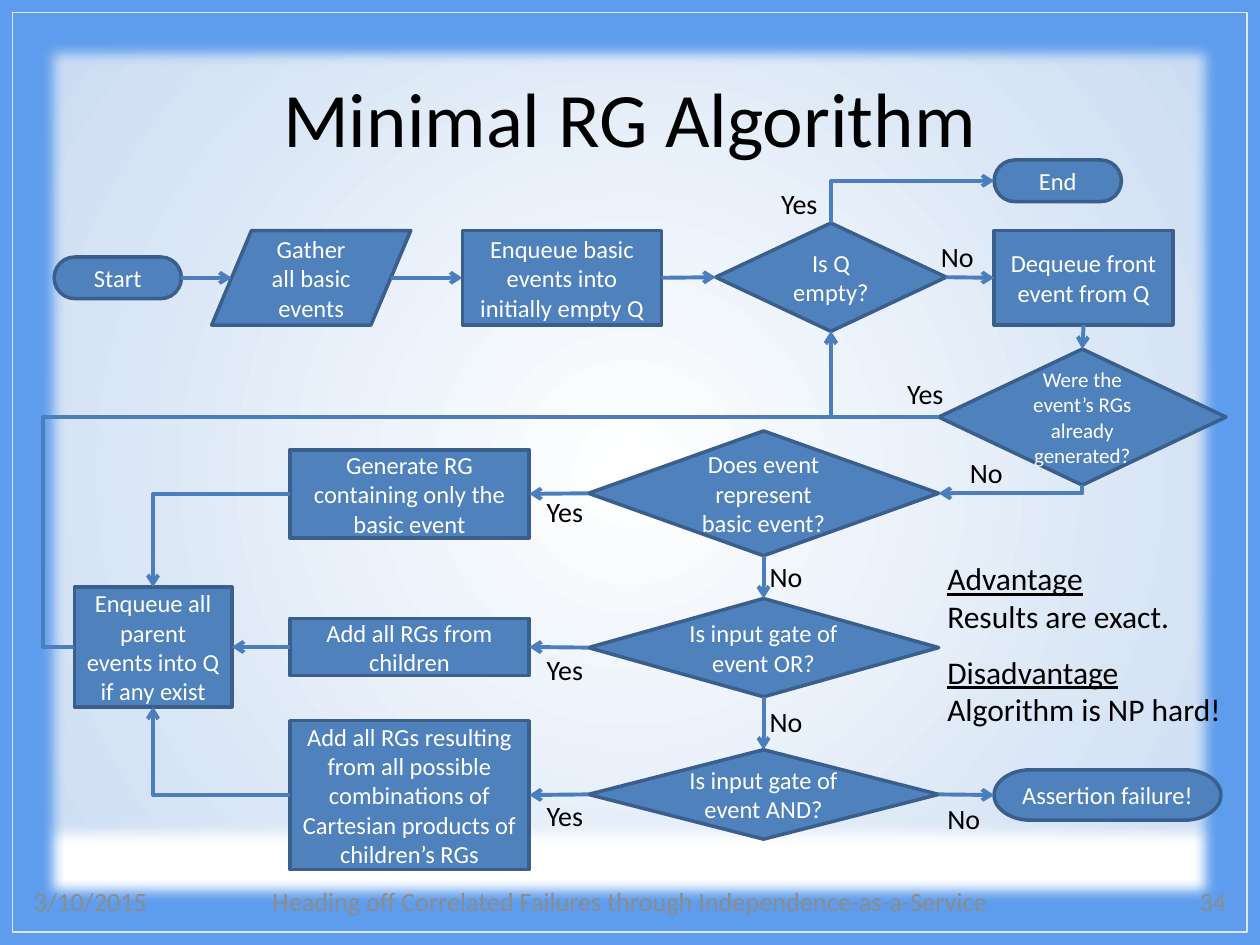
from dataclasses import dataclass

from lxml.etree import SubElement
from pptx import Presentation
from pptx.dml.color import RGBColor
from pptx.enum.dml import MSO_FILL
from pptx.enum.shapes import MSO_CONNECTOR as Route, MSO_SHAPE as Preset
from pptx.enum.text import MSO_ANCHOR as Anchor, MSO_AUTO_SIZE as AutoSize, PP_ALIGN as Align
from pptx.oxml.ns import qn
from pptx.util import Inches, Pt

FONT = "Calibri"
BLACK = RGBColor(0x00, 0x00, 0x00)
WHITE = RGBColor(0xFF, 0xFF, 0xFF)
GRAY = RGBColor(0x8C, 0x8C, 0x8C)
EDGE_BLUE = RGBColor(0xC6, 0xD9, 0xF1)
FRAME = RGBColor(0xDC, 0xE6, 0xF2)
GLOW = RGBColor(0x5E, 0x9D, 0xED)
NODE_FILL = RGBColor(0x4F, 0x81, 0xBD)
NODE_LINE = RGBColor(0x3A, 0x5F, 0x8C)
LINK = RGBColor(0x4B, 0x7E, 0xBC)

TOP, LEFT, BOTTOM, RIGHT = range(4)
TERMINATOR = Preset.FLOWCHART_TERMINATOR
DATA = Preset.FLOWCHART_DATA
PROCESS = Preset.FLOWCHART_PROCESS
DECISION = Preset.FLOWCHART_DECISION


@dataclass(frozen=True)
class Node:
    preset: Preset
    left: float
    top: float
    width: float
    height: float
    text: str
    size: int = 14

    def site(self, side: int) -> tuple[float, float]:
        """Point where a link meets the given side."""
        slant = self.width / 10 if self.preset == DATA else 0
        middle_x, middle_y = self.left + self.width / 2, self.top + self.height / 2
        return {
            TOP: (middle_x, self.top),
            LEFT: (self.left + slant, middle_y),
            BOTTOM: (middle_x, self.top + self.height),
            RIGHT: (self.left + self.width - slant, middle_y),
        }[side]


@dataclass(frozen=True)
class Link:
    source: str
    source_side: int
    target: str
    target_side: int


NODES = {
    "start": Node(TERMINATOR, 0.43, 2.04, 1.01, 0.33, "Start"),
    "gather": Node(DATA, 1.68, 1.83, 1.58, 0.75, "Gather all basic events"),
    "fill": Node(PROCESS, 3.67, 1.83, 1.58, 0.75, "Enqueue basic events into initially empty Q"),
    "empty": Node(DECISION, 5.68, 1.77, 1.83, 0.86, "Is Q empty?"),
    "end": Node(TERMINATOR, 7.89, 1.27, 1.01, 0.33, "End"),
    "dequeue": Node(PROCESS, 7.89, 1.83, 1.42, 0.75, "Dequeue front event from Q"),
    "and": Node(DECISION, 4.67, 5.95, 2.78, 0.71, "Is input gate of event AND?"),
    "done": Node(DECISION, 7.45, 2.77, 2.28, 1.08,
                 "Were the event’s RGs already generated?", 12),
    "basic": Node(DECISION, 4.67, 3.42, 2.78, 0.99, "Does event represent basic event?"),
    "or": Node(DECISION, 4.67, 4.75, 2.78, 0.78, "Is input gate of event OR?"),
    "generate": Node(PROCESS, 2.3, 3.57, 1.9, 0.7, "Generate RG containing only the basic event"),
    "add": Node(PROCESS, 2.3, 4.91, 1.9, 0.45, "Add all RGs from children"),
    "combine": Node(PROCESS, 2.3, 5.72, 1.9, 1.18,
                    "Add all RGs resulting from all possible combinations of "
                    "Cartesian products of children’s RGs"),
    "parents": Node(PROCESS, 0.59, 4.66, 1.25, 0.95,
                    "Enqueue all parent events into Q if any exist"),
    "failure": Node(TERMINATOR, 7.89, 6.11, 1.8, 0.4, "Assertion failure!"),
}
STRAIGHT_LINKS = [
    Link("start", RIGHT, "gather", LEFT), Link("gather", RIGHT, "fill", LEFT),
    Link("fill", RIGHT, "empty", LEFT), Link("empty", RIGHT, "dequeue", LEFT),
    Link("dequeue", BOTTOM, "done", TOP), Link("basic", LEFT, "generate", RIGHT),
    Link("add", LEFT, "parents", RIGHT), Link("or", LEFT, "add", RIGHT),
    Link("and", LEFT, "combine", RIGHT), Link("basic", BOTTOM, "or", TOP),
    Link("or", BOTTOM, "and", TOP), Link("and", RIGHT, "failure", LEFT),
]
CORNER_LINKS = [
    Link("empty", TOP, "end", LEFT), Link("done", BOTTOM, "basic", RIGHT),
    Link("done", LEFT, "empty", BOTTOM), Link("generate", LEFT, "parents", TOP),
    Link("combine", LEFT, "parents", BOTTOM),
]
LOOP_LINK = Link("parents", LEFT, "empty", BOTTOM)
ANSWERS = {
    "Yes": [(6.1, 1.43), (7.1, 2.94), (4.24, 3.88), (4.24, 5.13), (4.24, 6.29)],
    "No": [(7.37, 1.85), (7.6, 3.57), (6.01, 4.39), (6.01, 5.54), (7.42, 6.31)],
}


def style(para, size: float, color: RGBColor, align: Align = Align.LEFT) -> None:
    para.alignment = align
    para.font.name, para.font.size = FONT, Pt(size)
    para.font.color.rgb = color


def add_text(page, left, top, width, height, lines: list[str], size, color=BLACK,
             align=Align.LEFT, wrap=False):
    box = page.shapes.add_textbox(*map(Inches, (left, top, width, height)))
    frame = box.text_frame
    frame.word_wrap = wrap
    frame.auto_size = AutoSize.NONE if wrap else AutoSize.SHAPE_TO_FIT_TEXT
    frame.vertical_anchor = Anchor.MIDDLE if wrap else Anchor.TOP
    frame.text = "\n".join(lines)
    for para in frame.paragraphs:
        style(para, size, color, align)
    return frame


def add_glowing_rectangle(page, left, top, width, height, color: RGBColor):
    box = page.shapes.add_shape(Preset.RECTANGLE, *map(Inches, (left, top, width, height)))
    box.shadow.inherit = False
    effects = box._element.spPr.find(qn("a:effectLst"))
    glow = SubElement(effects, qn("a:glow"), rad=str(Inches(0.2)))
    SubElement(glow, qn("a:srgbClr"), val=str(color))
    return box


def add_node(page, node: Node):
    box = page.shapes.add_shape(
        node.preset, *map(Inches, (node.left, node.top, node.width, node.height)))
    box.shadow.inherit = False
    box.fill.solid()
    box.fill.fore_color.rgb = NODE_FILL
    box.line.color.rgb, box.line.width = NODE_LINE, Pt(2)
    box.text_frame.text = node.text
    style(box.text_frame.paragraphs[0], node.size, WHITE, Align.CENTER)
    return box


def add_arrow(page, route: Route, *ends: float):
    arrow = page.shapes.add_connector(route, *map(Inches, ends))
    arrow.line.color.rgb, arrow.line.width = LINK, Pt(2.25)
    SubElement(arrow.line._get_or_add_ln(), qn("a:tailEnd"), type="arrow")
    SubElement(arrow._element.spPr, qn("a:effectLst"))
    return arrow


def add_straight(page, link: Link, boxes: dict) -> None:
    source, target = NODES[link.source], NODES[link.target]
    arrow = add_arrow(page, Route.STRAIGHT,
                      *source.site(link.source_side), *target.site(link.target_side))
    if source.preset != DATA:
        arrow.begin_connect(boxes[link.source], link.source_side)
    if target.preset != DATA:
        arrow.end_connect(boxes[link.target], link.target_side)


def add_bent(page, link: Link, preset: str, **adjustments: int) -> None:
    x1, y1 = NODES[link.source].site(link.source_side)
    x2, y2 = NODES[link.target].site(link.target_side)
    upright = link.source_side in (TOP, BOTTOM)
    if upright:  # ends before a quarter turn about the centre
        middle_x, middle_y, run, rise = (x1 + x2) / 2, (y1 + y2) / 2, y2 - y1, x1 - x2
        x1, x2 = middle_x - run / 2, middle_x + run / 2
        y1, y2 = middle_y - rise / 2, middle_y + rise / 2
    arrow = add_arrow(page, Route.ELBOW, x1, y1, x2, y2)
    properties = arrow._element.spPr
    if upright:
        properties.find(qn("a:xfrm")).set("rot", str(90 * 60000))
    geometry = properties.find(qn("a:prstGeom"))
    geometry.set("prst", preset)
    for name, value in adjustments.items():
        SubElement(geometry.find(qn("a:avLst")), qn("a:gd"), name=name, fmla=f"val {value}")


deck = Presentation()
deck.slide_width, deck.slide_height = Inches(10), Inches(7.5)
page = deck.slides.add_slide(deck.slide_layouts[5])

# Radial background
backdrop = page.background.fill
backdrop.gradient()
for stop, color in zip(backdrop.gradient_stops, (WHITE, EDGE_BLUE)):
    stop.color.rgb = color
gradient = page._element.find(".//" + qn("a:gradFill"))
gradient.remove(gradient.find(qn("a:lin")))
radial = SubElement(gradient, qn("a:path"), path="circle")
SubElement(radial, qn("a:fillToRect"), l="50000", t="50000", r="50000", b="50000")

# Footer band and glowing frame
band = add_glowing_rectangle(page, 0, 6.92, 10, 0.58, WHITE)
band.fill.solid()
band.fill.fore_color.rgb = WHITE
band.line.fill.background()
border = add_glowing_rectangle(page, 0.1, 0.1, 9.8, 7.3, GLOW)
border.fill.background()
border.line.color.rgb, border.line.width = FRAME, Pt(1)

# Title and footer
title = page.shapes.title
title.left, title.top, title.width, title.height = map(Inches, (0.5, 0.3, 9, 1.25))
title.text_frame.text = "Minimal RG Algorithm"
title.text_frame.vertical_anchor = Anchor.MIDDLE
style(title.text_frame.paragraphs[0], 44, BLACK, Align.CENTER)
for left, width, text, align in (
    (0.17, 1.33, "3/10/2015", Align.LEFT),
    (1.96, 6.08, "Heading off Correlated Failures through Independence-as-a-Service", Align.CENTER),
    (8.5, 1.33, "34", Align.RIGHT),
):
    add_text(page, left, 6.95, width, 0.4, [text], 15, GRAY, align, wrap=True)

# Flowchart
boxes = {name: add_node(page, node) for name, node in NODES.items()}
for link in STRAIGHT_LINKS:
    add_straight(page, link, boxes)
for link in CORNER_LINKS:
    add_bent(page, link, "bentConnector2")
add_bent(page, LOOP_LINK, "bentConnector4", adj1=-4200, adj2=72800)
for answer, places in ANSWERS.items():
    for left, top in places:
        add_text(page, left, top, 0.49 if answer == "Yes" else 0.47, 0.37, [answer], 16)

# Verdict
for top, width, heading, remark in (
    (4.39, 1.98, "Advantage", "Results are exact."),
    (5.13, 2.4, "Disadvantage", "Algorithm is NP hard!"),
):
    verdict = add_text(page, 7.42, top, width, 0.71, [heading, remark], 18)
    verdict.paragraphs[0].font.underline = True

deck.save("out.pptx")
